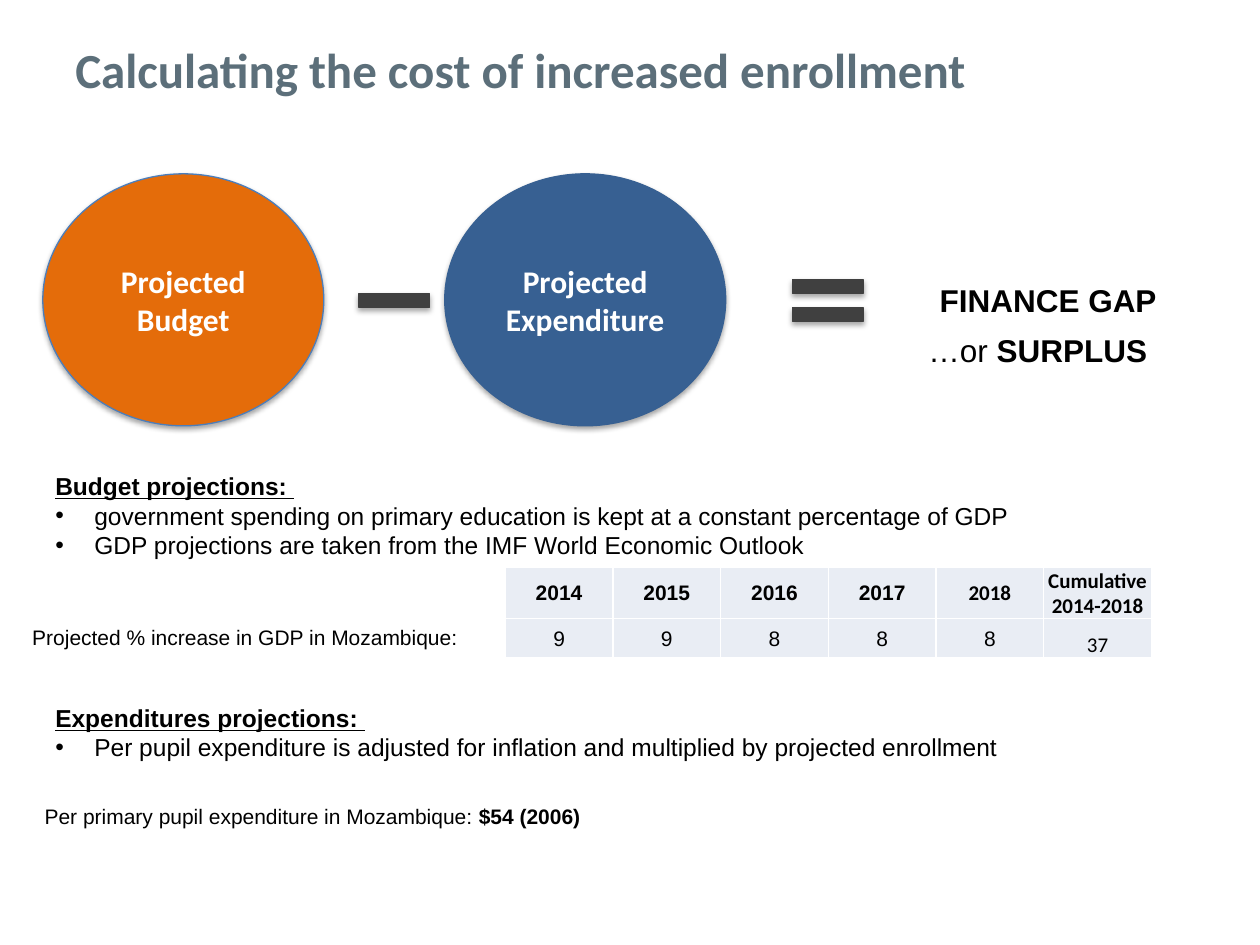
from dataclasses import dataclass

from lxml import etree
from pptx import Presentation
from pptx.dml.color import RGBColor
from pptx.enum.shapes import MSO_SHAPE
from pptx.enum.text import MSO_ANCHOR, PP_ALIGN
from pptx.oxml import parse_xml
from pptx.oxml.ns import nsdecls, qn
from pptx.util import Inches, Pt

OVAL, RECTANGLE = MSO_SHAPE.OVAL, MSO_SHAPE.RECTANGLE
TOP, MIDDLE, BOTTOM = MSO_ANCHOR.TOP, MSO_ANCHOR.MIDDLE, MSO_ANCHOR.BOTTOM
LEFT, CENTER = PP_ALIGN.LEFT, PP_ALIGN.CENTER

COLORS = {
    "title": "5C6F7A",
    "white": "FFFFFF",
    "black": "000000",
    "orange": "E46C0A",
    "orange_line": "4B7EBC",
    "blue": "376092",
    "sign": "404040",
    "cell": "E9EDF4",
}


@dataclass(frozen=True)
class Run:
    text: str
    size: float = 14
    bold: bool = False
    underline: bool = False
    name: str = "Arial"
    color: str = "black"


@dataclass(frozen=True)
class Line:
    runs: tuple[Run, ...]
    bullet: bool = False


@dataclass(frozen=True)
class TextBlock:
    box: tuple[float, float, float, float]
    lines: tuple[Line, ...]
    align: PP_ALIGN = LEFT
    anchor: MSO_ANCHOR = TOP


@dataclass(frozen=True)
class Figure:
    kind: MSO_SHAPE
    box: tuple[float, float, float, float]
    fill: str
    line: str
    label: str = ""


def color(key: str) -> RGBColor:
    return RGBColor.from_string(COLORS[key])


def heading(text: str) -> Line:
    return Line((Run(text, bold=True, underline=True),))


def bullet(text: str) -> Line:
    return Line((Run(text),), bullet=True)


FIGURES = (
    Figure(OVAL, (3.53, 1.38, 2.23, 2), "blue", "blue", "Projected Expenditure"),
    Figure(OVAL, (0.34, 1.38, 2.23, 2), "orange", "orange_line", "Projected Budget"),
    *(
        Figure(RECTANGLE, (left, top, 0.56, 0.11), "sign", "sign")
        for left, top in ((2.85, 2.33), (6.29, 2.22), (6.29, 2.44))
    ),
)

TEXT_BLOCKS = (
    TextBlock(
        (0.5, 0, 9.5, 1.09),
        (Line((Run("Calculating the cost of increased enrollment", 28, True,
                   name="Calibri", color="title"),)),),
        anchor=MIDDLE,
    ),
    TextBlock((7.36, 2.18, 2.1, 0.4), (Line((Run("FINANCE GAP", 18, True),)),)),
    TextBlock((7.27, 2.58, 2.19, 0.4),
              (Line((Run("…or ", 18), Run("SURPLUS", 18, True))),)),
    TextBlock(
        (0.34, 3.69, 7.92, 0.81),
        (
            heading("Budget projections: "),
            bullet("government spending on primary education is kept at a constant percentage of GDP"),
            bullet("GDP projections are taken from the IMF World Economic Outlook"),
        ),
    ),
    TextBlock(
        (0.34, 5.53, 7.92, 0.57),
        (
            heading("Expenditures projections: "),
            bullet("Per pupil expenditure is adjusted for inflation and multiplied by projected enrollment"),
        ),
    ),
    TextBlock((0.09, 4.91, 3.71, 0.3),
              (Line((Run("Projected % increase in GDP in Mozambique:", 12),)),), CENTER),
    TextBlock((0.09, 6.33, 4.78, 0.3),
              (Line((Run("Per primary pupil expenditure in Mozambique: ", 12),
                     Run("$54 (2006)", 12, True))),), CENTER),
)

TABLE_BOX = (4.01, 4.5, 5.13, 0.72)
ROW_HEIGHTS = (0.41, 0.31)
GROWTH = (
    ("2014", "2015", "2016", "2017", "2018", "Cumulative 2014-2018"),
    ("9", "9", "8", "8", "8", "37"),
)
CALIBRI_CELLS = {(0, 4), (0, 5), (1, 5)}
CELL_FORMAT = {
    "margin_left": Inches(0.01),
    "margin_right": Inches(0.01),
    "margin_top": Inches(0.01),
    "margin_bottom": Inches(0),
}


def add_run(paragraph, item: Run) -> None:
    run = paragraph.add_run()
    run.text = item.text
    font_format = {
        "size": Pt(item.size),
        "bold": item.bold,
        "underline": item.underline,
        "name": item.name,
    }
    for attribute, value in font_format.items():
        setattr(run.font, attribute, value)
    run.font.color.rgb = color(item.color)


def add_bullet(paragraph) -> None:
    properties = paragraph._p.get_or_add_pPr()
    properties.set("marL", str(Inches(0.31)))
    properties.set("indent", str(Inches(-0.31)))
    font = etree.SubElement(properties, qn("a:buFont"))
    font.set("typeface", "Arial")
    character = etree.SubElement(properties, qn("a:buChar"))
    character.set("char", "•")


def fill_text(frame, lines: tuple[Line, ...], align: PP_ALIGN) -> None:
    for index, line in enumerate(lines):
        paragraph = frame.add_paragraph() if index else frame.paragraphs[0]
        paragraph.alignment = align
        if line.bullet:
            add_bullet(paragraph)
        for item in line.runs:
            add_run(paragraph, item)


def add_shadow(shape) -> None:
    shape.shadow.inherit = False
    effects = shape._element.spPr.find(qn("a:effectLst"))
    effects.append(parse_xml(
        f'<a:outerShdw {nsdecls("a")} blurRad="{Pt(3.1)}" dist="{Pt(1.8)}" '
        f'dir="5400000" rotWithShape="0"><a:srgbClr val="{COLORS["black"]}">'
        '<a:alpha val="35000"/></a:srgbClr></a:outerShdw>'
    ))


def add_figure(slide, figure: Figure) -> None:
    shape = slide.shapes.add_shape(figure.kind, *map(Inches, figure.box))
    shape.fill.solid()
    shape.fill.fore_color.rgb = color(figure.fill)
    shape.line.color.rgb = color(figure.line)
    shape.line.width = Pt(0.75)
    add_shadow(shape)
    if figure.label:
        shape.text_frame.vertical_anchor = MIDDLE
        label = Run(figure.label, 18, True, name="Calibri", color="white")
        fill_text(shape.text_frame, (Line((label,)),), CENTER)


def add_text_block(slide, block: TextBlock) -> None:
    frame = slide.shapes.add_textbox(*map(Inches, block.box)).text_frame
    frame.word_wrap = True
    frame.vertical_anchor = block.anchor
    fill_text(frame, block.lines, block.align)


def add_growth_table(slide) -> None:
    table = slide.shapes.add_table(
        len(GROWTH), len(GROWTH[0]), *map(Inches, TABLE_BOX)).table
    table.first_row = False
    table.horz_banding = False
    for row_index, values in enumerate(GROWTH):
        table.rows[row_index].height = Inches(ROW_HEIGHTS[row_index])
        for column_index, value in enumerate(values):
            cell = table.cell(row_index, column_index)
            for attribute, margin in CELL_FORMAT.items():
                setattr(cell, attribute, margin)
            cell.vertical_anchor = BOTTOM if value == "37" else MIDDLE
            cell.fill.solid()
            cell.fill.fore_color.rgb = color("cell")
            name = "Calibri" if (row_index, column_index) in CALIBRI_CELLS else "Arial"
            item = Run(value, 12, row_index == 0, name=name)
            fill_text(cell.text_frame, (Line((item,)),), CENTER)


def main() -> None:
    presentation = Presentation()
    presentation.slide_width, presentation.slide_height = Inches(10), Inches(7.5)
    slide = presentation.slides.add_slide(presentation.slide_layouts[6])
    for figure in FIGURES:
        add_figure(slide, figure)
    for block in TEXT_BLOCKS:
        add_text_block(slide, block)
    add_growth_table(slide)
    presentation.save("out.pptx")


if __name__ == "__main__":
    main()
